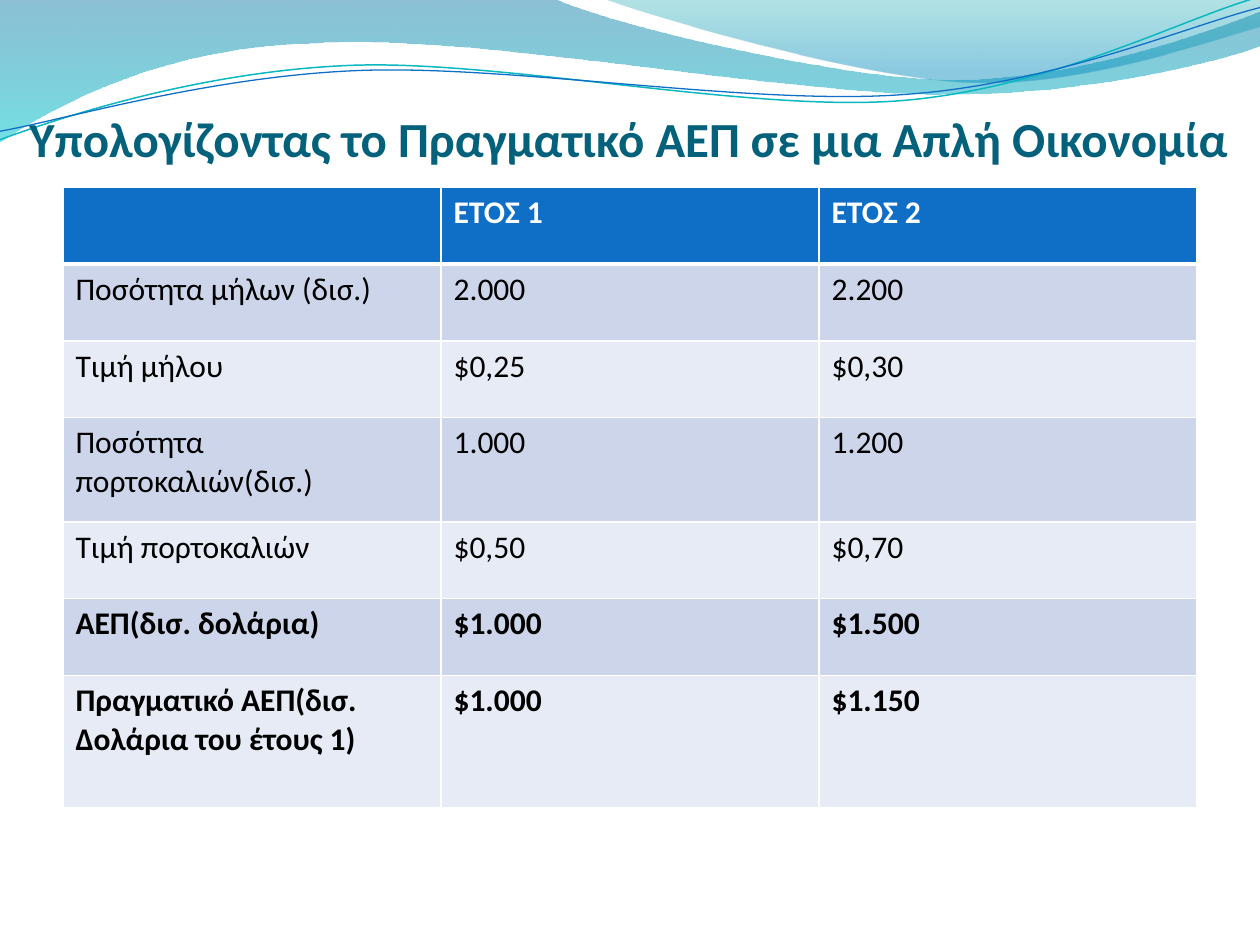
"""Build the slide on real GDP in a simple economy: wave header, title and table."""
import pptx
import pptx.dml.color
import pptx.enum.text
import pptx.oxml
import pptx.oxml.ns
import pptx.util
from pptx.util import Pt

RGBColor = pptx.dml.color.RGBColor
WHITE = RGBColor(0xFF, 0xFF, 0xFF)
BLACK = RGBColor(0x00, 0x00, 0x00)
TITLE_TEAL = RGBColor(0x04, 0x61, 0x7B)
BLUE = RGBColor(0x0F, 0x6F, 0xC6)
TEAL = RGBColor(0x0A, 0xB8, 0xBF)
BAND_DARK = RGBColor(0xCC, 0xD5, 0xEA)
BAND_LIGHT = RGBColor(0xE7, 0xEB, 0xF5)
WAVE_DEEP = RGBColor(0x00, 0x74, 0xA1)
WAVE_CYAN = RGBColor(0x00, 0xC6, 0xCF)
WAVE_GREEN = RGBColor(0x00, 0xA1, 0xA9)
WAVE_SKY = RGBColor(0x00, 0x8B, 0xBF)
FONT = "Calibri"
NAMESPACE = pptx.oxml.ns.nsdecls("a")


def add_curve(slide, start, segments, close):
    """Draw a freeform from line segments (one point) and cubic curves (three points)."""
    builder = slide.shapes.build_freeform(Pt(start[0]), Pt(start[1]))
    builder.add_line_segments(
        [(Pt(x), Pt(y)) for segment in segments for x, y in segment], close=close)
    shape = builder.convert_to_shape()
    shape.shadow.inherit = False
    lines = iter(shape._element.findall(".//" + pptx.oxml.ns.qn("a:lnTo")))
    for segment in segments:
        group = [next(lines) for point in segment]
        if len(group) == 3:
            curve = pptx.oxml.parse_xml(f"<a:cubicBezTo {NAMESPACE}/>")
            group[0].addprevious(curve)
            for line in group:
                curve.append(line[0])
                line.getparent().remove(line)
    return shape


def add_border(cell, side, width):
    """Give one side of a table cell a solid white line."""
    cell._tc.get_or_add_tcPr().append(pptx.oxml.parse_xml(
        f'<a:{side} {NAMESPACE} w="{Pt(width)}">'
        f'<a:solidFill><a:srgbClr val="{WHITE}"/></a:solidFill></a:{side}>'))


presentation = pptx.Presentation()
presentation.slide_width = Pt(720)
presentation.slide_height = Pt(540)
slide = presentation.slides.add_slide(presentation.slide_layouts[6])

waves = [
    ((0, 0), [
        [(316.8, -0.7)],
        [(342.7, 12.2), (478.1, 45.4), (545.8, 45.4)],
        [(614.2, 45.4), (689.8, 18.7), (720, 6.5)],
        [(720.7, 25.9)],
        [(707.8, 31.7), (626.4, 54.7), (537.1, 54)],
        [(446.4, 54), (275, 20.2), (185, 24.5)],
        [(92.9, 25.9), (33.1, 59.8), (-0.7, 81.4)],
        [(0, 0)],
    ], [(0, WAVE_DEEP, 45), (1, WAVE_CYAN, 55)]),
    ((344.9, -0.7), [
        [(366.5, 7.9), (491, 44.6), (553.7, 46.8)],
        [(616.3, 49.7), (691.9, 23), (720, 15.1)],
        [(720, 0)],
        [(344.9, -0.7)],
    ], [(0, WAVE_GREEN, 30), (0.8, WAVE_SKY, 45)]),
]
for start, segments, stops in waves:
    shape = add_curve(slide, start, segments, True)
    shape.line.fill.background()
    shape.fill.gradient()
    shape.fill.gradient_angle = 270
    for stop, (position, color, opacity) in zip(shape.fill.gradient_stops, stops):
        stop.position = position
        stop.color.rgb = color
    color_elements = shape._element.spPr.findall(".//" + pptx.oxml.ns.qn("a:srgbClr"))
    for element, (position, color, opacity) in zip(color_elements, stops):
        element.append(pptx.oxml.parse_xml(
            f'<a:alpha {NAMESPACE} val="{opacity * 1000}"/>'))

strands = [
    ((-1.4, 62.9), [
        [(33.8, 51.7), (114.1, 29.4), (199.8, 29.9)],
        [(284.9, 30.3), (425.8, 67.3), (512.4, 64.9)],
        [(599, 62.4), (676.4, 25.7), (720.2, 15.5)],
    ], TEAL, 0.85),
    ((-1.1, 58), [
        [(32.9, 53.8), (118.3, 32.5), (204.1, 33)],
        [(290.6, 33.4), (428.2, 63.8), (515.5, 61.4)],
        [(601.3, 59.6), (678.4, 30.1), (721.4, 21.3)],
    ], BLUE, 0.75),
]
for start, segments, color, width in strands:
    shape = add_curve(slide, start, segments, False)
    shape.rotation = 357.3
    shape.fill.background()
    shape.line.color.rgb = color
    shape.line.width = Pt(width)

title = slide.shapes.add_textbox(Pt(16.7), Pt(50.4), Pt(686.5), Pt(45.4))
text_frame = title.text_frame
text_frame.word_wrap = True
text_frame.vertical_anchor = pptx.enum.text.MSO_ANCHOR.BOTTOM
text_frame.margin_left = text_frame.margin_right = text_frame.margin_bottom = 0
text_frame.margin_top = Pt(3.6)
text_frame.text = "Υπολογίζοντας το Πραγματικό ΑΕΠ σε μια Απλή Οικονομία"
font = text_frame.paragraphs[0].runs[0].font
font.name, font.size, font.bold = FONT, Pt(28), True
font.color.rgb = TITLE_TEAL

rows = [
    ("", "ΕΤΟΣ 1", "ΕΤΟΣ 2"),
    ("Ποσότητα μήλων (δισ.)", "2.000", "2.200"),
    ("Τιμή μήλου", "$0,25", "$0,30"),
    ("Ποσότητα πορτοκαλιών(δισ.)", "1.000", "1.200"),
    ("Τιμή πορτοκαλιών", "$0,50", "$0,70"),
    ("ΑΕΠ(δισ. δολάρια)", "$1.000", "$1.500"),
    ("Πραγματικό ΑΕΠ(δισ. Δολάρια του έτους 1)", "$1.000", "$1.150"),
]
row_heights = [43.9, 43.9, 43.9, 59.5, 43.9, 43.9, 75.5]
bold_rows = (0, 5, 6)
table = slide.shapes.add_table(
    len(rows), 3, Pt(36), Pt(107), Pt(648), Pt(sum(row_heights))).table
for column in table.columns:
    column.width = Pt(216)
for row_index, (texts, height) in enumerate(zip(rows, row_heights)):
    table.rows[row_index].height = Pt(height)
    is_header = row_index == 0
    fill_color = BLUE if is_header else BAND_DARK if row_index % 2 else BAND_LIGHT
    for column_index, text in enumerate(texts):
        cell = table.cell(row_index, column_index)
        add_border(cell, "lnL", 1)
        add_border(cell, "lnR", 1)
        add_border(cell, "lnT", 3 if row_index == 1 else 1)
        add_border(cell, "lnB", 3 if is_header else 1)
        cell.fill.solid()
        cell.fill.fore_color.rgb = fill_color
        cell.text_frame.text = text
        for run in cell.text_frame.paragraphs[0].runs:
            run.font.name, run.font.size = FONT, Pt(18)
            run.font.bold = row_index in bold_rows
            run.font.color.rgb = WHITE if is_header else BLACK

presentation.save("out.pptx")
